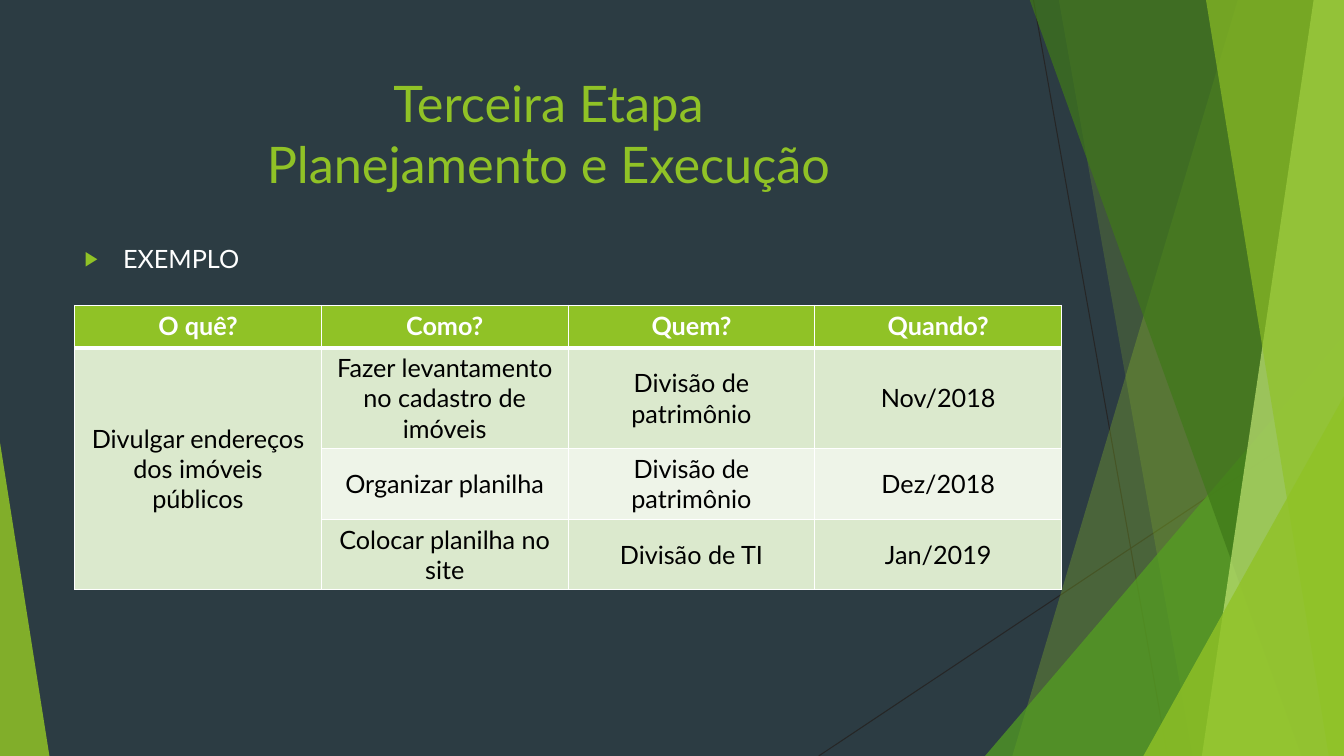
from copy import deepcopy

from lxml.etree import SubElement
from pptx import Presentation
from pptx.dml.color import RGBColor
from pptx.enum.shapes import MSO_CONNECTOR, MSO_SHAPE
from pptx.enum.text import MSO_ANCHOR, MSO_AUTO_SIZE, PP_ALIGN
from pptx.oxml.ns import qn
from pptx.util import Inches, Pt

TITLE = "Terceira Etapa\vPlanejamento e Execução"
BULLET = "EXEMPLO"
HEADERS = ["O quê?", "Como?", "Quem?", "Quando?"]
GOAL = "Divulgar endereços dos imóveis públicos"
ACTIONS = [
    ("Fazer levantamento no cadastro de imóveis", "Divisão de patrimônio", "Nov/2018"),
    ("Organizar planilha", "Divisão de patrimônio", "Dez/2018"),
    ("Colocar planilha no site", "Divisão de TI", "Jan/2019"),
]

THEME = {
    "font": "Lato",
    "background": "2C3C43",
    "accent": "90C226",
    "green": "54A021",
    "dark_green": "3F7819",
    "pale_green": "C0E474",
    "hairline": "262626",
    "white": "FFFFFF",
    "black": "000000",
    "bands": ["DBE9CD", "EEF4E8"],
    "title_size": 36,
    "text_size": 18,
}

SLIDE_WIDTH, SLIDE_HEIGHT = 13.33, 7.5
BLEED = -0.01
LEFT = 0.74
TITLE_BOX = (LEFT, 0.67, 9.4, 1.44)
BODY_BOX = (LEFT, 2.36, 9.4, 4.24)
TABLE_BOX = (LEFT, 3.03, 9.79, 2.82)
ROW_HEIGHTS = [0.42, 1, 0.7, 0.7]

HAIRLINES = [(10.25, 0, 11.58, 7.5), (13.33, 4.03, 8.12, 7.5)]
DECORATION = [
    ("facet", (12.28, 10.04), "accent", 30),
    ("facet", (10.5, 11.83), "accent", 20),
    ("triangle", (9.77, 3.33, 3.56, 4.17, 1), "green", 72),
    ("facet", (10.21, 12.91), "dark_green", 70),
    ("facet", (13.03, 11.92), "pale_green", 70),
    ("facet", (11.96, 13.18), "accent", 65),
    ("triangle", (11.34, 3.93, 1.99, 3.57, 1), "accent", 80),
    ("triangle", (0, 4.39, 0.49, 3.11, 0), "accent", 85),
]


def color(value):
    return RGBColor.from_string(value)


def apply_format(target, values):
    for name, value in values.items():
        setattr(target, name, value)


def inches(values):
    return [Inches(value) for value in values]


def place(shape, box):
    apply_format(shape, dict(zip(("left", "top", "width", "height"), inches(box))))


def write(text_frame, text, size, text_color, align, bold=False):
    paragraph = text_frame.paragraphs[0]
    paragraph.text = text
    paragraph.alignment = align
    for run in paragraph.runs:
        apply_format(run.font, {"name": THEME["font"], "size": Pt(size), "bold": bold})
        run.font.color.rgb = color(text_color)
    for line_break in paragraph._p.findall(qn("a:br")):
        line_break.append(deepcopy(paragraph.runs[0]._r.rPr))
    return paragraph


def add_hairline(slide, ends):
    line = slide.shapes.add_connector(MSO_CONNECTOR.STRAIGHT, *inches(ends))
    line.line.color.rgb = color(THEME["hairline"])
    line.line.width = Pt(0.75)
    SubElement(line._element.spPr, qn("a:effectLst"))


def add_facet(slide, top_x, bottom_x):
    corners = [(SLIDE_WIDTH, BLEED), (SLIDE_WIDTH, SLIDE_HEIGHT), (bottom_x, SLIDE_HEIGHT)]
    builder = slide.shapes.build_freeform(Inches(top_x), Inches(BLEED))
    builder.add_line_segments([inches(corner) for corner in corners], close=True)
    return builder.convert_to_shape()


def add_triangle(slide, left, top, width, height, apex):
    box = inches((left, top, width, height))
    shape = slide.shapes.add_shape(MSO_SHAPE.ISOSCELES_TRIANGLE, *box)
    shape.adjustments[0] = apex
    return shape


def add_decoration(slide):
    for ends in HAIRLINES:
        add_hairline(slide, ends)
    makers = {"facet": add_facet, "triangle": add_triangle}
    for kind, geometry, fill, opacity in DECORATION:
        shape = makers[kind](slide, *geometry)
        shape.shadow.inherit = False
        shape.line.fill.background()
        shape.fill.solid()
        shape.fill.fore_color.rgb = color(THEME[fill])
        fill_color = shape._element.spPr.find(".//" + qn("a:srgbClr"))
        SubElement(fill_color, qn("a:alpha"), val=str(opacity * 1000))


def add_text(slide):
    title, body = slide.shapes.title, slide.placeholders[1]
    for shape, box in ((title, TITLE_BOX), (body, BODY_BOX)):
        place(shape, box)
        apply_format(shape.text_frame, {
            "word_wrap": True,
            "auto_size": MSO_AUTO_SIZE.NONE,
            "vertical_anchor": MSO_ANCHOR.TOP,
        })
        slide.shapes._spTree.append(shape._element)
    write(title.text_frame, TITLE, THEME["title_size"], THEME["accent"], PP_ALIGN.CENTER)
    paragraph = write(body.text_frame, BULLET, THEME["text_size"], THEME["white"], PP_ALIGN.LEFT)
    paragraph.space_before = Pt(10)
    properties = paragraph._p.get_or_add_pPr()
    properties.set("marL", str(Inches(0.38)))
    properties.set("indent", str(-Inches(0.38)))
    bullet_color = SubElement(properties, qn("a:buClr"))
    SubElement(bullet_color, qn("a:srgbClr"), val=THEME["accent"])
    SubElement(properties, qn("a:buSzPct"), val="80000")
    SubElement(properties, qn("a:buFont"), typeface=THEME["font"])
    SubElement(properties, qn("a:buChar"), char="▶")


def set_borders(cell, widths):
    properties = cell._tc.get_or_add_tcPr()
    for index, (side, width) in enumerate(widths.items()):
        border = SubElement(properties, qn("a:ln" + side), w=str(Pt(width)))
        fill = SubElement(border, qn("a:solidFill"))
        SubElement(fill, qn("a:srgbClr"), val=THEME["white"])
        properties.insert(index, border)


def add_plan_table(slide):
    rows = [HEADERS] + [(GOAL if not index else "", *action) for index, action in enumerate(ACTIONS)]
    frame = slide.shapes.add_table(len(rows), len(HEADERS), *inches(TABLE_BOX))
    table = frame.table
    for row, height in zip(table.rows, ROW_HEIGHTS):
        row.height = Inches(height)
    table.cell(1, 0).merge(table.cell(len(ACTIONS), 0))
    for row_index, row in enumerate(rows):
        header = row_index == 0
        fill = THEME["accent"] if header else THEME["bands"][(row_index - 1) % 2]
        text_color = THEME["white"] if header else THEME["black"]
        for column_index, text in enumerate(row):
            cell = table.cell(row_index, column_index)
            cell.vertical_anchor = MSO_ANCHOR.TOP if header else MSO_ANCHOR.MIDDLE
            cell.fill.solid()
            cell.fill.fore_color.rgb = color(fill)
            top = 3 if row_index == 1 else 1
            set_borders(cell, {"L": 1, "R": 1, "T": top, "B": 3 if header else 1})
            if text:
                write(cell.text_frame, text, THEME["text_size"], text_color, PP_ALIGN.CENTER, header)


def main():
    presentation = Presentation()
    presentation.slide_width = Inches(SLIDE_WIDTH)
    presentation.slide_height = Inches(SLIDE_HEIGHT)
    slide = presentation.slides.add_slide(presentation.slide_layouts[1])
    slide.background.fill.solid()
    slide.background.fill.fore_color.rgb = color(THEME["background"])
    add_decoration(slide)
    add_text(slide)
    add_plan_table(slide)
    presentation.save("out.pptx")


if __name__ == "__main__":
    main()
